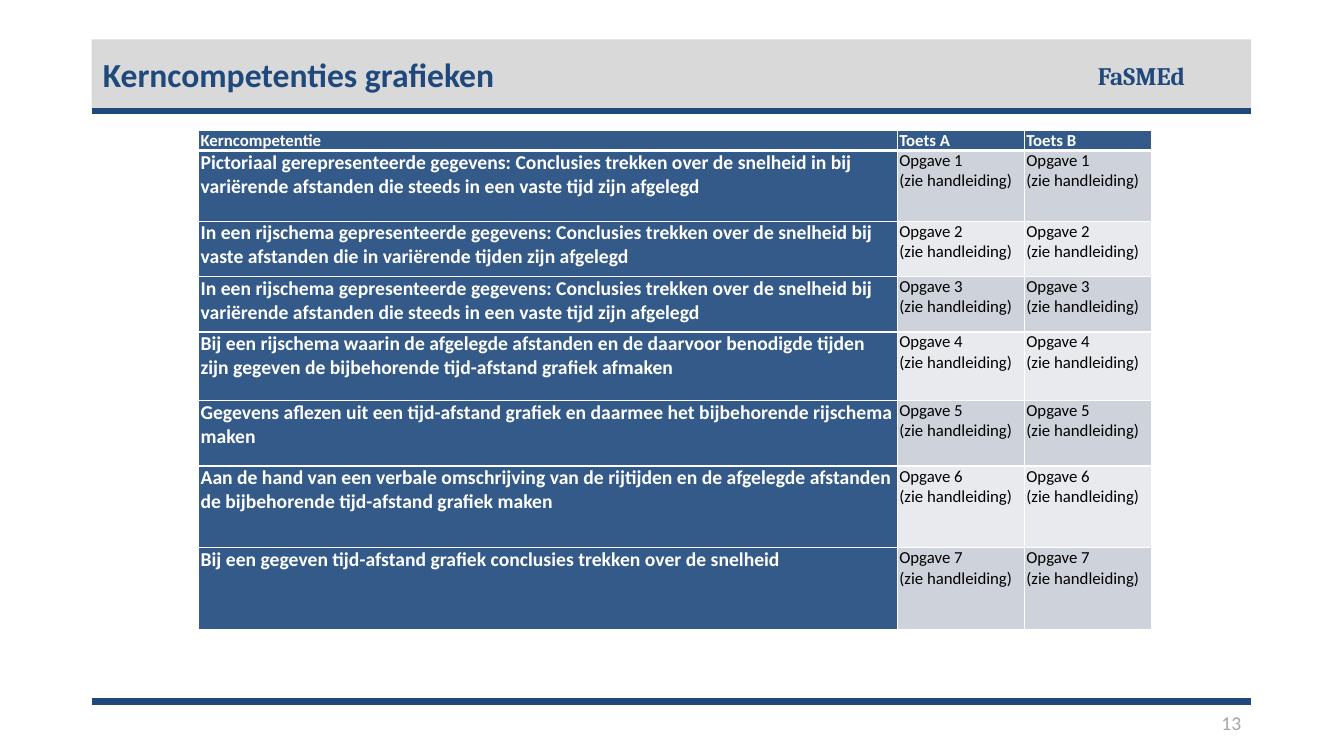
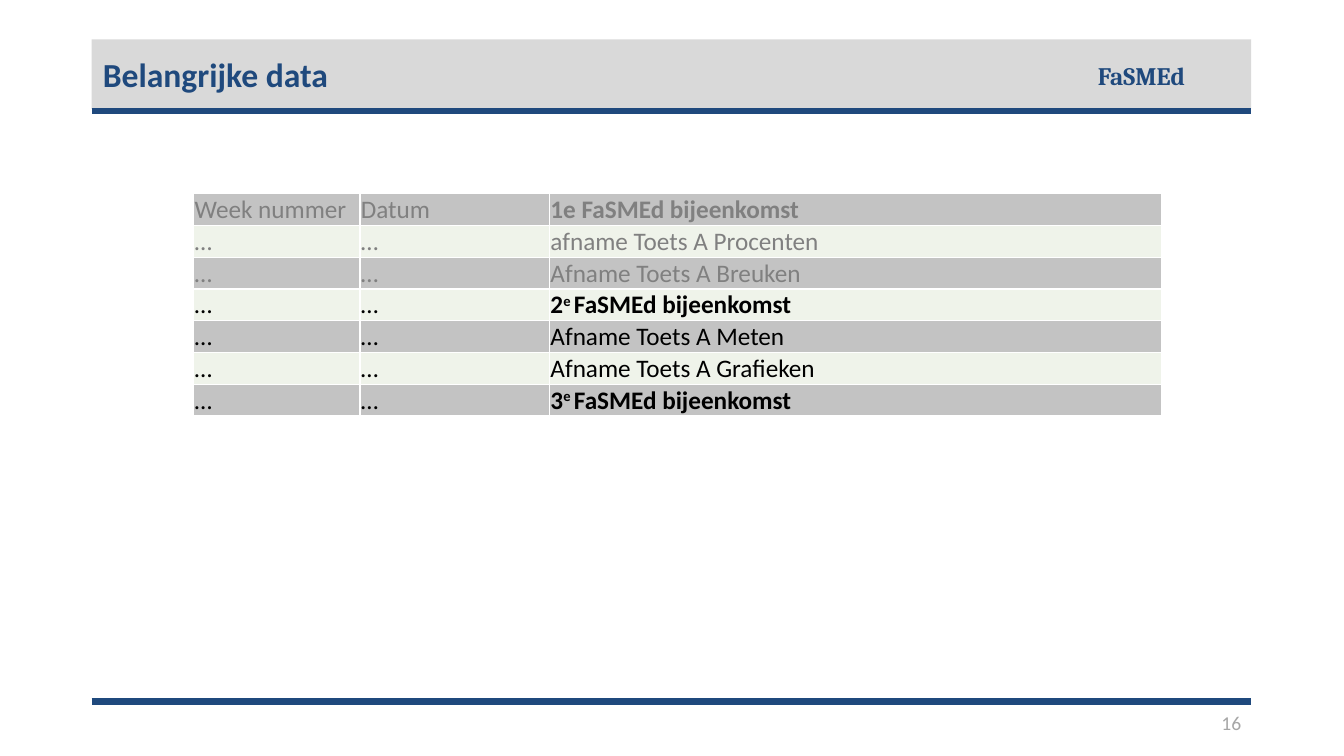
from lxml import etree
from pptx import Presentation
from pptx.dml.color import RGBColor
from pptx.enum import shapes, text
from pptx.oxml import ns
from pptx.util import Inches, Pt

NAVY = RGBColor(0x1F, 0x49, 0x7D)
BLUE = RGBColor(0x34, 0x5A, 0x8A)
BAND = RGBColor(0xD9, 0xD9, 0xD9)
PALE = RGBColor(0xA6, 0xA6, 0xA6)
MIST = RGBColor(0xCE, 0xD2, 0xDA)
HAZE = RGBColor(0xE8, 0xEA, 0xED)
GREY = RGBColor(0xC3, 0xC3, 0xC3)
MINT = RGBColor(0xEF, 0xF3, 0xEA)
DIM = RGBColor(0x80, 0x80, 0x80)
BLACK = RGBColor(0, 0, 0)
WHITE = RGBColor(0xFF, 0xFF, 0xFF)

LEFT, WIDE = 0.91, 11.5

SKILLS = [
    ("Pictoriaal gerepresenteerde gegevens: Conclusies trekken over de snelheid in bij "
     "variërende afstanden die steeds in een vaste tijd zijn afgelegd", 0.7),
    ("In een rijschema gepresenteerde gegevens: Conclusies trekken over de snelheid bij "
     "vaste afstanden die in variërende tijden zijn afgelegd", 0.55),
    ("In een rijschema gepresenteerde gegevens: Conclusies trekken over de snelheid bij "
     "variërende afstanden die steeds in een vaste tijd zijn afgelegd", 0.55),
    ("Bij een rijschema waarin de afgelegde afstanden en de daarvoor benodigde tijden "
     "zijn gegeven de bijbehorende tijd-afstand grafiek afmaken", 0.68),
    ("Gegevens aflezen uit een tijd-afstand grafiek en daarmee het bijbehorende rijschema "
     "maken", 0.65),
    ("Aan de hand van een verbale omschrijving van de rijtijden en de afgelegde afstanden "
     "de bijbehorende tijd-afstand grafiek maken", 0.81),
    ("Bij een gegeven tijd-afstand grafiek conclusies trekken over de snelheid", 0.81),
]

DATES = [
    ("1e FaSMEd bijeenkomst", DIM, True),
    ("afname Toets A Procenten", DIM, False),
    ("Afname Toets A Breuken", DIM, False),
    ("2^e ^FaSMEd bijeenkomst", BLACK, True),
    ("Afname Toets A Meten", BLACK, False),
    ("Afname Toets A Grafieken", BLACK, False),
    ("3^e ^FaSMEd bijeenkomst", BLACK, True),
]


class Deck:
    def __init__(self):
        self.prs = Presentation()
        self.prs.slide_width = Inches(13.33)
        self.prs.slide_height = Inches(7.5)
        self.slide = None

    def page(self, title, number):
        self.slide = self.prs.slides.add_slide(self.prs.slide_layouts[5])
        self.rule(6.96)
        self.label(str(number), (10.44, 7, 1.97, 0.34), 14, PALE, False,
                   align=text.PP_ALIGN.RIGHT, anchor=text.MSO_ANCHOR.MIDDLE)
        self.band(0.39, 0.69)
        self.rule(1.1)
        self.label("FaSMEd", (10.79, 0.55, 1.11, 0.4), 18, NAVY, True, face="Cambria")
        self.title(title)

    def title(self, words):
        head = self.slide.shapes.title
        head.element.getparent().append(head.element)
        self.place(head, (0.92, 0.41, WIDE, 0.71))
        frame = head.text_frame
        frame.auto_size = text.MSO_AUTO_SIZE.NONE
        frame.vertical_anchor = text.MSO_ANCHOR.MIDDLE
        self.style(frame, words, 24, NAVY, True)
        frame.paragraphs[0].line_spacing = 0.9

    def place(self, shape, spot):
        shape.left, shape.top, shape.width, shape.height = map(Inches, spot)

    def band(self, top, height):
        box = self.slide.shapes.add_shape(
            shapes.MSO_SHAPE.RECTANGLE, *map(Inches, (LEFT, top, WIDE, height)))
        box.shadow.inherit = False
        box.fill.solid()
        box.fill.fore_color.rgb = BAND
        box.line.fill.background()

    def rule(self, top):
        line = self.slide.shapes.add_connector(
            shapes.MSO_CONNECTOR.STRAIGHT, *map(Inches, (LEFT, top, LEFT + WIDE, top)))
        line.line.color.rgb = NAVY
        line.line.width = Pt(4.5)
        etree.SubElement(line.element.spPr, ns.qn("a:effectLst"))

    def label(self, words, spot, size, color, bold, face="Calibri",
              align=text.PP_ALIGN.LEFT, anchor=text.MSO_ANCHOR.TOP):
        frame = self.slide.shapes.add_textbox(*map(Inches, spot)).text_frame
        frame.word_wrap = True
        frame.vertical_anchor = anchor
        self.style(frame, words, size, color, bold, face, align)

    def style(self, frame, words, size, color, bold, face="Calibri",
              align=text.PP_ALIGN.LEFT):
        frame.text = words
        for para in frame.paragraphs:
            para.alignment = align
            parts = para.text.split("^")
            para.runs[0].text = parts[0]
            for part in parts[1:]:
                para.add_run().text = part
            for k, run in enumerate(para.runs):
                font = run.font
                font.name, font.size, font.bold = face, Pt(size), bold
                font.color.rgb = color
                if k % 2:
                    run._r.get_or_add_rPr().set("baseline", "30000")

    def table(self, left, top, cols, rows):
        grid = self.slide.shapes.add_table(
            len(rows), len(cols),
            *map(Inches, (left, top, sum(cols), sum(rows)))).table
        for col, width in zip(grid.columns, cols):
            col.width = Inches(width)
        for row, height in zip(grid.rows, rows):
            row.height = Inches(height)
        return grid

    def cell(self, cell, words, size, color, bold, fill, inset, below=1):
        cell.margin_left, cell.margin_top, cell.margin_right, cell.margin_bottom = map(
            Inches, inset)
        self.style(cell.text_frame, words, size, color, bold)
        props = cell._tc.get_or_add_tcPr()
        for side, width in (("L", 1), ("R", 1), ("T", 1), ("B", below)):
            edge = etree.SubElement(props, ns.qn("a:ln" + side), w=str(Pt(width)))
            solid = etree.SubElement(edge, ns.qn("a:solidFill"))
            etree.SubElement(solid, ns.qn("a:srgbClr"), val=str(WHITE))
        cell.fill.solid()
        cell.fill.fore_color.rgb = fill


def skills(deck):
    deck.page("Kerncompetenties grafieken", 13)
    inset = (0.02, 0, 0.02, 0)
    grid = deck.table(1.97, 1.29, [6.93, 1.26, 1.26], [0.2] + [h for _, h in SKILLS])
    for c, words in enumerate(("Kerncompetentie", "Toets A", "Toets B")):
        deck.cell(grid.cell(0, c), words, 12, WHITE, True, BLUE, inset, below=3)
    for r, (words, _) in enumerate(SKILLS, 1):
        deck.cell(grid.cell(r, 0), words, 14, WHITE, True, BLUE, inset)
        for c in (1, 2):
            deck.cell(grid.cell(r, c), f"Opgave {r}\n(zie handleiding)", 12, BLACK, False,
                      MIST if r % 2 else HAZE, inset)


def dates(deck):
    deck.page("Belangrijke data", 16)
    grid = deck.table(1.92, 1.92, [1.65, 1.88, 6.07], [0.31] * len(DATES))
    for r, (words, color, bold) in enumerate(DATES):
        lead = ("…", "…") if r else ("Week nummer", "Datum")
        for c, item in enumerate((*lead, words)):
            deck.cell(grid.cell(r, c), item, 18, color, bold and c == 2,
                      MINT if r % 2 else GREY, (0.01, 0.01, 0.01, 0))


def main():
    deck = Deck()
    skills(deck)
    dates(deck)
    deck.prs.save("out.pptx")


if __name__ == "__main__":
    main()
